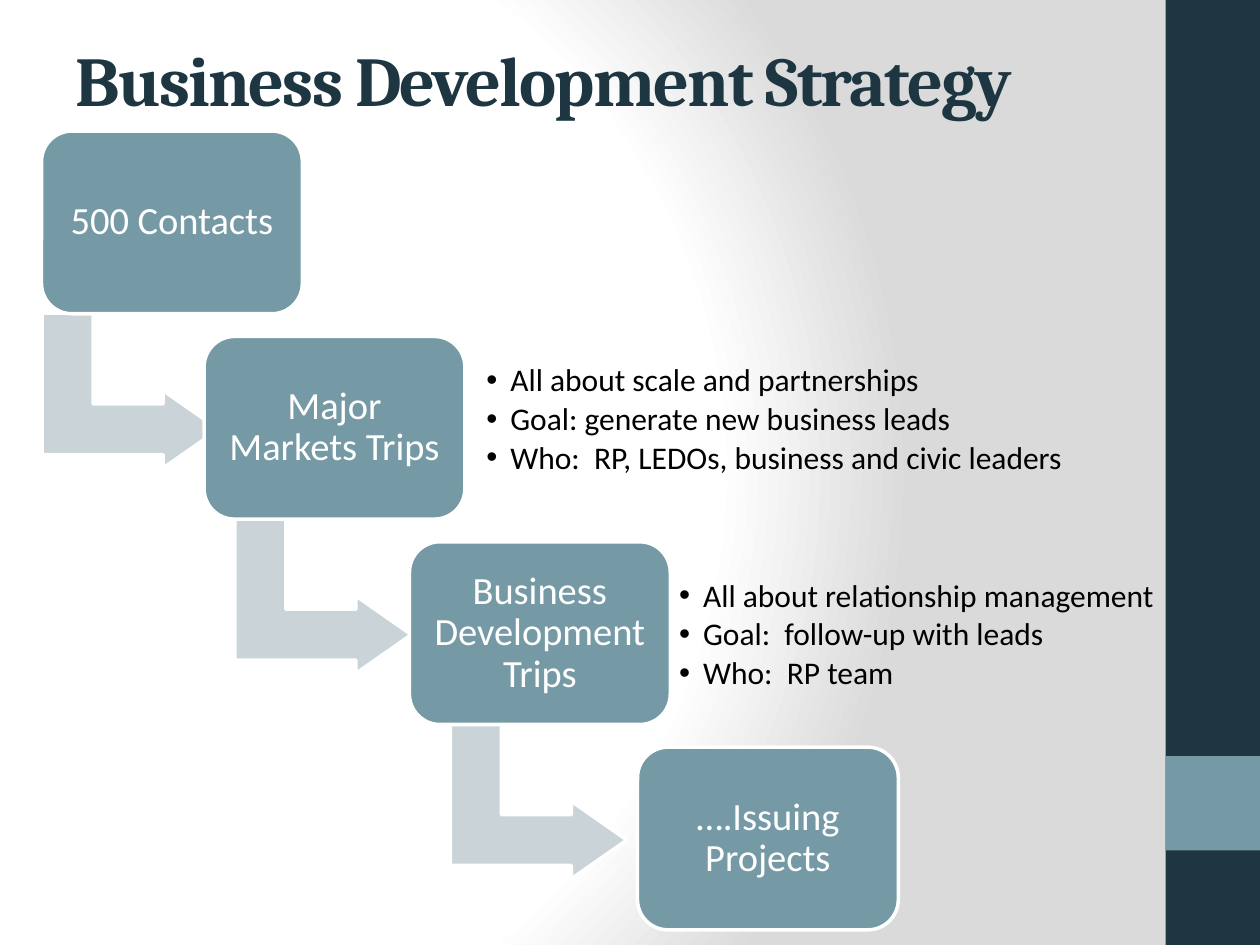
from lxml import etree
from pptx import Presentation
from pptx.dml.color import RGBColor
from pptx.enum import shapes, text
from pptx.oxml import parse_xml
from pptx.oxml.ns import nsdecls
from pptx.util import Inches, Pt

NAVY = RGBColor(0x1D, 0x36, 0x41)
TEAL = RGBColor(0x75, 0x9A, 0xA5)
PALE = RGBColor(0xCA, 0xD4, 0xD8)
WHITE = RGBColor(0xFF, 0xFF, 0xFF)
GREY = RGBColor(0xDA, 0xDA, 0xDA)
BLACK = RGBColor(0, 0, 0)

BOX_W, BOX_H = 2.07, 1.45
FIRST_TOP, STEP_DOWN = 1.04, 1.63
ARROW_W, ARROW_H, ARROW_DROP = 1.23, 1.4, 1.36
LIST_H = 1.17

# label, box left, left of the arrow to the next step (unrotated)
STEPS = [
    ("500 Contacts", 0.33, 0.42),
    ("Major Markets Trips", 1.62, 1.95),
    ("Business Development Trips", 3.25, 3.66),
    ("….Issuing Projects", 5.06, None),
]

# left, top, width, items
DETAILS = [
    (3.79, 2.75, 5.66, ["All about scale and partnerships",
                        "Goal: generate new business leads",
                        "Who:  RP, LEDOs, business and civic leaders"]),
    (5.32, 4.46, 4.18, ["All about relationship management",
                        "Goal:  follow-up with leads",
                        "Who:  RP team"]),
]


def place(sp, left, top, width, height):
    sp.left, sp.top = Inches(left), Inches(top)
    sp.width, sp.height = Inches(width), Inches(height)


def write(tf, lines, *, size, color, font="Calibri", bold=False, margin=0.1,
          align=text.PP_ALIGN.LEFT, line_spacing=0.9, after=0):
    """Fill a text frame with one paragraph per line and return the paragraphs."""
    tf.word_wrap = True
    tf.auto_size = text.MSO_AUTO_SIZE.NONE
    tf.vertical_anchor = text.MSO_ANCHOR.MIDDLE
    tf.margin_left = tf.margin_right = Inches(margin)
    tf.margin_top = tf.margin_bottom = Inches(margin)
    for i, line in enumerate(lines):
        p = tf.paragraphs[0] if i == 0 else tf.add_paragraph()
        p.alignment = align
        p.line_spacing = line_spacing
        p.space_before, p.space_after = Pt(0), Pt(after)
        r = p.add_run()
        r.text = line
        r.font.name, r.font.size, r.font.bold = font, Pt(size), bold
        r.font.color.rgb = color
    return tf.paragraphs


def add_block(slide, kind, box, fill, line=None):
    left, top, width, height = map(Inches, box)
    sp = slide.shapes.add_shape(kind, left, top, width, height)
    sp.shadow.inherit = False
    sp.fill.solid()
    sp.fill.fore_color.rgb = fill
    if line is None:
        sp.line.fill.background()
    else:
        sp.line.color.rgb = line
        sp.line.width = Pt(2)
    return sp


def set_background(slide):
    """Radial gradient, white at the focus and grey at the right."""
    stops = "".join(
        f'<a:gs pos="{pos * 1000}"><a:srgbClr val="{color}"/></a:gs>'
        for pos, color in ((0, WHITE), (75, WHITE), (100, GREY)))
    bg = parse_xml(
        f'<p:bg {nsdecls("p", "a")}><p:bgPr><a:gradFill rotWithShape="1">'
        f'<a:gsLst>{stops}</a:gsLst><a:path path="circle">'
        '<a:fillToRect l="20000" t="50000" r="100000" b="50000"/></a:path>'
        '</a:gradFill><a:effectLst/></p:bgPr></p:bg>')
    slide.element.cSld.insert(0, bg)


def add_sidebar(slide, left, top, width, height):
    rect = shapes.MSO_SHAPE.RECTANGLE
    add_block(slide, rect, (left, top, width, height), NAVY)
    add_block(slide, rect, (left, top + 0.8 * height, width, width), TEAL)


def set_title(slide, left, top, width, height):
    title = slide.shapes.title
    place(title, left, top, width, height)
    p, = write(title.text_frame, ["Business Development Strategy"], size=40,
               color=NAVY, font="Cambria", bold=True, line_spacing=1.0)
    p.runs[0].font._element.set("spc", "-100")


def add_step(slide, label, left, top, arrow_left):
    """Step box, with a bent arrow below it unless it is the last one."""
    if arrow_left is not None:
        arrow = add_block(slide, shapes.MSO_SHAPE.BENT_UP_ARROW,
                          (arrow_left, top + ARROW_DROP, ARROW_W, ARROW_H),
                          PALE, WHITE)
        arrow.rotation = 90
        for i, value in enumerate((0.328, 0.25, 0.358)):
            arrow.adjustments[i] = value
    box = add_block(slide, shapes.MSO_SHAPE.ROUNDED_RECTANGLE,
                    (left, top, BOX_W, BOX_H), TEAL, WHITE)
    # The rounded corners already inset the text area
    write(box.text_frame, [label], size=22, color=WHITE, margin=0.08,
          align=text.PP_ALIGN.CENTER)


def set_details(sp, left, top, width, items):
    place(sp, left, top, width, LIST_H)
    for p in write(sp.text_frame, items, size=18, color=BLACK, margin=0.07,
                   after=2.7):
        pPr = p._p.get_or_add_pPr()
        pPr.set("marL", str(Inches(0.19)))
        pPr.set("indent", str(-Inches(0.19)))
        bullet = etree.SubElement(pPr, pPr.tag.replace("pPr", "buChar"))
        bullet.set("char", "•")


def main():
    prs = Presentation()
    prs.slide_width, prs.slide_height = Inches(10), Inches(7.5)
    slide = prs.slides.add_slide(prs.slide_layouts.get_by_name("Two Content"))
    set_background(slide)
    add_sidebar(slide, 9.25, 0, 0.75, 7.5)
    set_title(slide, 0.5, 0, 8.33, 1.25)
    for i, (label, left, arrow_left) in enumerate(STEPS):
        add_step(slide, label, left, FIRST_TOP + i * STEP_DOWN, arrow_left)
    for idx, detail in enumerate(DETAILS, start=1):
        sp = slide.placeholders[idx]
        set_details(sp, *detail)
        slide.shapes._spTree.append(sp.element)  # in front of the sidebar
    prs.save("out.pptx")


if __name__ == "__main__":
    main()
